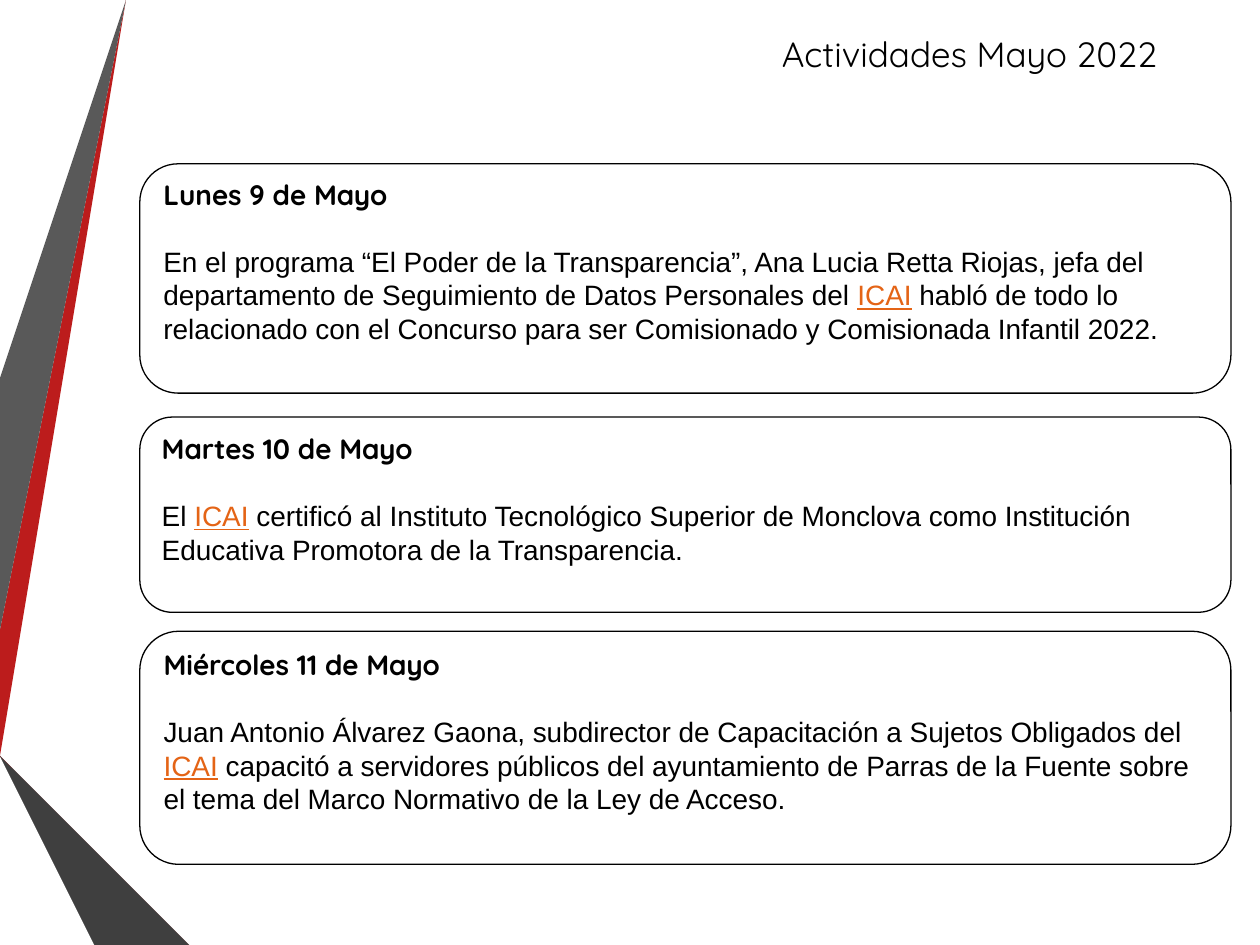
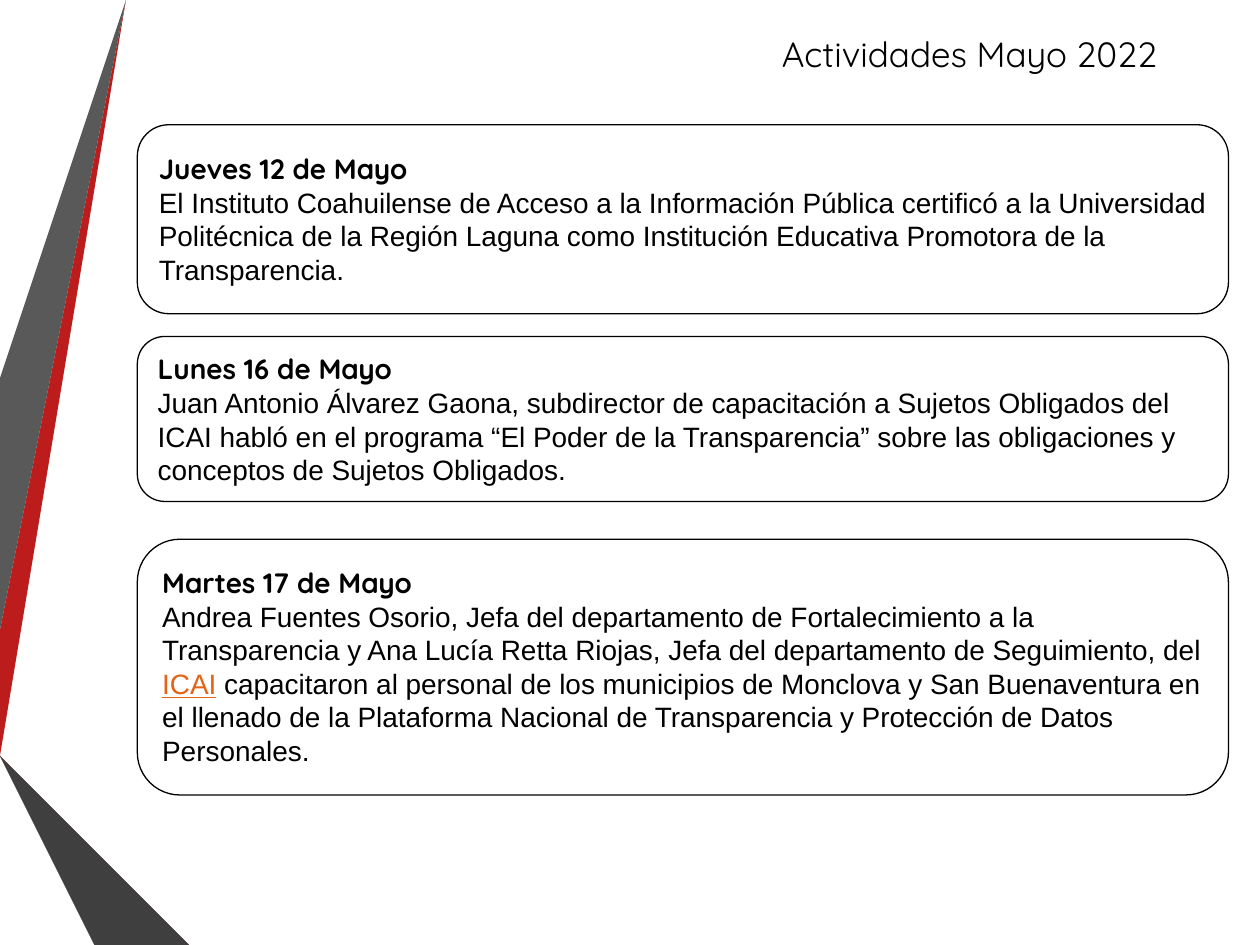
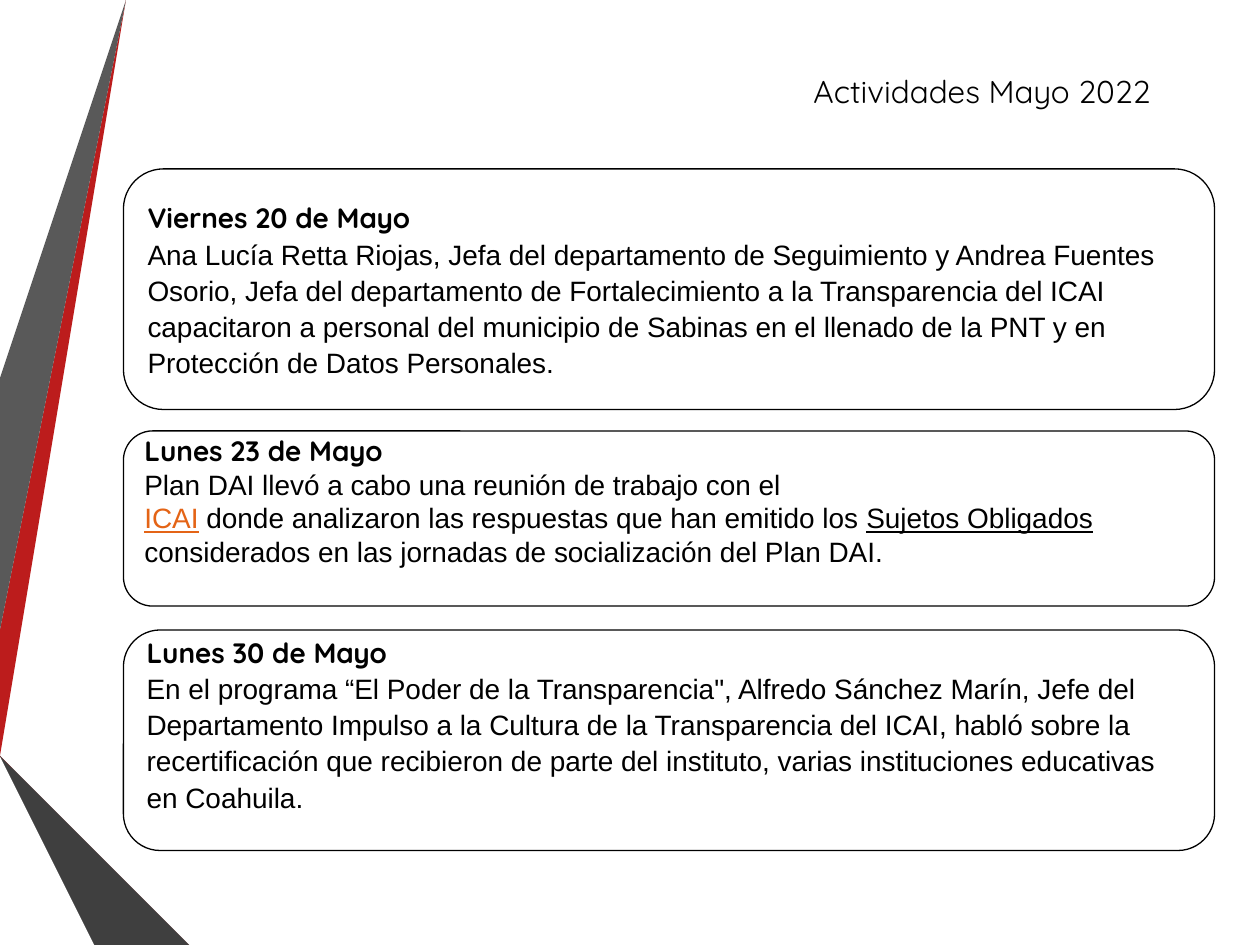
from pptx import Presentation, util as u
from pptx.dml.color import RGBColor
from pptx.enum import shapes, text

BLACK, LINK = "000000", "E46416"
HEAD, BODY = "Quicksand", "Arial"

BANDS = [
    ("BC1C1C", [(0, 5.44), (0, 5.75), (0.22, 5.79), (1.17, 0), (0.89, 0)]),
    ("595959", [(0.83, 0), (0.55, 0), (0, 3.36), (0, 5.06)]),
    ("262626", [(0, 6.19), (0, 6.21), (0.93, 7.5), (0.99, 7.5)]),
    ("5E0D0E", [(0, 5.79), (0, 5.8), (1.56, 7.5), (1.63, 7.5)]),
    ("8D1415", [(0, 5.79), (1.63, 7.5), (2.33, 7.5), (0.22, 5.79), (0, 5.75)]),
    ("3F3F3F", [(0, 6.19), (0.99, 7.5), (1.51, 7.5), (0, 5.86)]),
]

# Per slide: title box, title size, card left, gap after heading, body spacing, cards.
# Per card: top, height, inset above text, heading spacing, heading, body.
# Words between bars are underlined; a new line starts a new paragraph.
SLIDES = [
    ((5.63, 0.21, 4.13, 0.44), 20, 1.11, 19, [
        (1.3, 1.82, 0.02, 1, 1, "Lunes 9 de Mayo",
         "En el programa “El Poder de la Transparencia”, Ana Lucia Retta Riojas, "
         "jefa del departamento de Seguimiento de Datos Personales del |ICAI| habló "
         "de todo lo relacionado con el Concurso para ser Comisionado y Comisionada "
         "Infantil 2022."),
        (3.31, 1.55, 0.04, 1, 1, "Martes 10 de Mayo",
         "El |ICAI| certificó al Instituto Tecnológico Superior de Monclova como "
         "Institución Educativa Promotora de la Transparencia."),
        (5.01, 1.85, 0.04, 1, 1, "Miércoles 11 de Mayo",
         "Juan Antonio Álvarez Gaona, subdirector de Capacitación a Sujetos "
         "Obligados del |ICAI| capacitó a servidores públicos del ayuntamiento de "
         "Parras de la Fuente sobre el tema del Marco Normativo de la Ley de Acceso."),
    ]),
    ((5.63, 0.21, 4.13, 0.44), 20, 1.09, 0, [
        (0.99, 1.5, 0.14, 1, 1, "Jueves 12 de Mayo",
         "El Instituto Coahuilense de Acceso a la Información Pública certificó a "
         "la Universidad Politécnica de la Región Laguna como Institución Educativa "
         "Promotora de la Transparencia."),
        (2.67, 1.31, 0.06, 1, 1, "Lunes 16 de Mayo",
         "Juan Antonio Álvarez Gaona, subdirector de capacitación a Sujetos "
         "Obligados del ICAI habló en el programa “El Poder de la Transparencia” "
         "sobre las obligaciones y conceptos de Sujetos Obligados."),
        (4.28, 2.03, 0.11, 1, 1, "Martes 17 de Mayo",
         "Andrea Fuentes Osorio, Jefa del departamento de Fortalecimiento a "
         "la Transparencia y Ana Lucía Retta Riojas, Jefa del departamento de "
         "Seguimiento, del |ICAI| capacitaron al personal de los municipios de "
         "Monclova y San Buenaventura en el llenado de la Plataforma Nacional de "
         "Transparencia y Protección de Datos Personales."),
    ]),
    ((6.03, 0.52, 3.53, 0.4), 18, 0.98, 0, [
        (1.34, 1.91, 0.14, 1.08, 1.08, "Viernes 20 de Mayo",
         "Ana Lucía Retta Riojas, Jefa del departamento de Seguimiento y Andrea "
         "Fuentes Osorio, Jefa del departamento de Fortalecimiento a la "
         "Transparencia del ICAI capacitaron a personal del municipio de Sabinas "
         "en el llenado de la PNT y en Protección de Datos Personales."),
        (3.42, 1.39, 0, 0.83, 1, "Lunes 23 de Mayo",
         "Plan DAI llevó a cabo una reunión de trabajo con el\n"
         "|ICAI| donde analizaron las respuestas que han emitido los "
         "|Sujetos Obligados| considerados en las jornadas de socialización del "
         "Plan DAI."),
        (5, 1.75, 0, 0.83, 1.08, "Lunes 30 de Mayo",
         "En el programa “El Poder de la Transparencia\", Alfredo Sánchez Marín, "
         "Jefe del Departamento Impulso a la Cultura de la Transparencia del ICAI, "
         "habló sobre la recertificación que recibieron de parte del instituto, "
         "varias instituciones educativas en Coahuila."),
    ]),
]


def paint(color, code):
    color.rgb = RGBColor.from_string(code)


def write(para, words, size=16, font=BODY, color=BLACK, bold=False, under=False):
    run = para.add_run()
    run.text = words
    run.font.size, run.font.name = u.Pt(size), font
    run.font.bold, run.font.underline = bold, under
    paint(run.font.color, color)


deck = Presentation()
deck.slide_width, deck.slide_height = u.Inches(10), u.Inches(7.5)
blank = deck.slide_layouts[6]

for num, (box, size, left, gap, cards) in enumerate(SLIDES):
    slide = deck.slides.add_slide(blank)

    # The bands are drawn once and moved to the layout that all slides share.
    if num == 0:
        for color, points in BANDS:
            path = slide.shapes.build_freeform(*points[0], scale=u.Inches(1))
            path.add_line_segments(points[1:], close=True)
            band = path.convert_to_shape()
            band.shadow.inherit = False
            band.fill.solid()
            paint(band.fill.fore_color, color)
            band.line.fill.background()
            blank.shapes._spTree.append(band._element)

    title = slide.shapes.add_textbox(*map(u.Inches, box)).text_frame
    title.word_wrap = True
    title.paragraphs[0].alignment = text.PP_ALIGN.CENTER
    write(title.paragraphs[0], "Actividades Mayo 2022", size=size, font=HEAD)

    for top, height, inset, lead, space, head, body in cards:
        card = slide.shapes.add_shape(
            shapes.MSO_SHAPE.FLOWCHART_ALTERNATE_PROCESS,
            *map(u.Inches, (left, top, 8.66, height)))
        card.shadow.inherit = False
        card.fill.background()
        card.line.width = u.Pt(0.75)
        paint(card.line.color, BLACK)

        frame = card.text_frame
        frame.word_wrap = True
        frame.vertical_anchor = text.MSO_ANCHOR.TOP
        frame.margin_top, frame.margin_bottom = u.Inches(inset), 0
        para = frame.paragraphs[0]
        para.alignment = text.PP_ALIGN.LEFT
        para.line_spacing, para.space_after = lead, u.Pt(gap)
        write(para, head, font=HEAD, bold=True)

        for line in body.split("\n"):
            para = frame.add_paragraph()
            para.alignment = text.PP_ALIGN.LEFT
            para.line_spacing = space
            for i, part in enumerate(line.split("|")):
                if part:
                    write(para, part, under=i % 2 == 1,
                          color=LINK if i % 2 and part == "ICAI" else BLACK)

deck.save("out.pptx")
